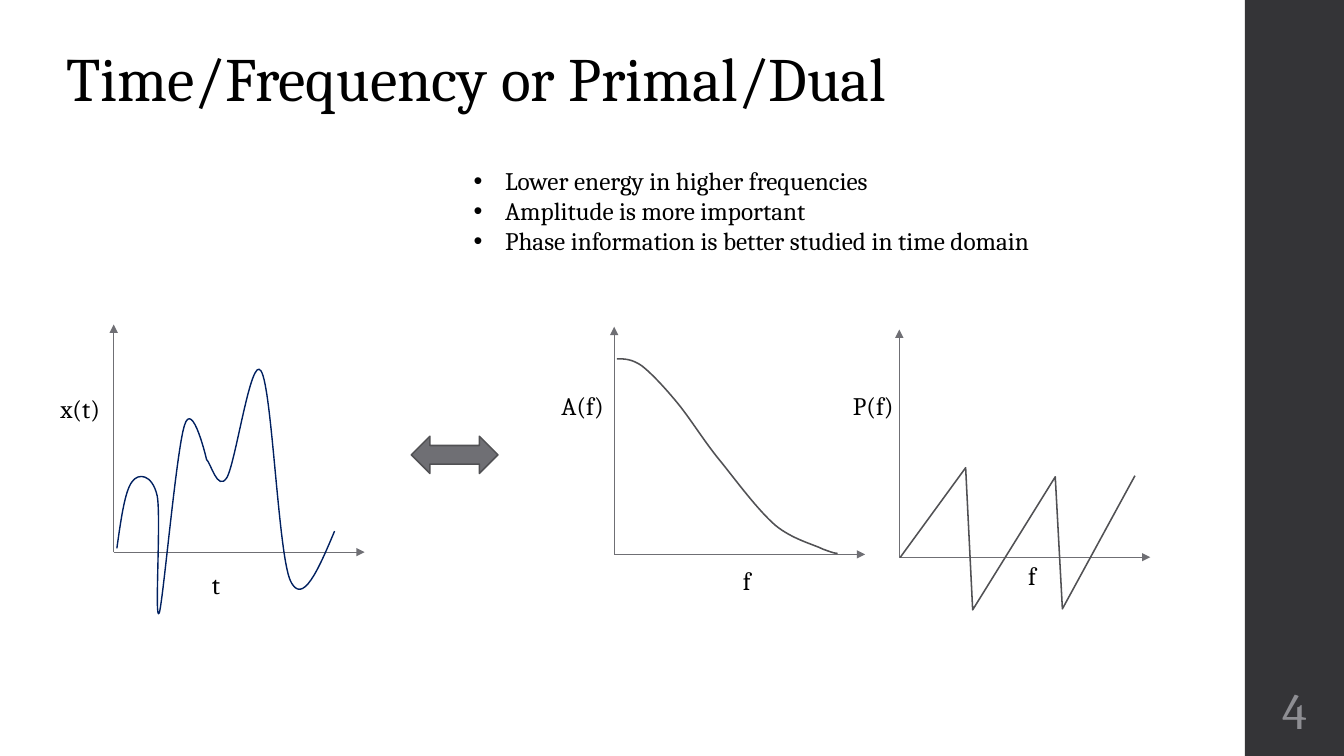
"""Builds a slide comparing a time signal with its amplitude and phase spectra."""
import pptx
import pptx.dml.color
import pptx.enum.shapes
import pptx.enum.text
import pptx.util
from lxml import etree
from pptx.oxml.ns import qn

Pt = pptx.util.Pt
SHAPE = pptx.enum.shapes.MSO_SHAPE
ANCHOR = pptx.enum.text.MSO_ANCHOR
ALIGN = pptx.enum.text.PP_ALIGN

FONT = "Cambria"
COLORS = {
    "text": "000000",
    "sidebar": "343437",
    "number": "8E8E93",
    "axis": "6F6F74",
    "spectrum": "515154",
    "signal": "002060",
}
AXIS_WIDTH, AXIS_HEIGHT = 179.3, 162.6

PLOTS = [
    ((81.2, 394.4), ("x(t)", 36, 277.6), ("t", 144.2, 402.8)),
    ((438.7, 396), ("A(f)", 394, 275), ("f", 523.6, 400.3)),
    ((642.4, 398), ("P(f)", 602.2, 275), ("f", 727.4, 396.7)),
]
SIGNAL = [
    (83.5, 391.7),
    (86.4, 370.8), (89.3, 350.6), (94.3, 344.2),
    (98.6, 337.7), (108.7, 338.4), (112.3, 354.2),
    (115.2, 369.4), (110.2, 446.4), (113.8, 437.8),
    (116.6, 429.1), (126, 321.8), (131.8, 303.8),
    (137.5, 285.1), (147.6, 328.3), (147.6, 328.3),
    (150.5, 330.5), (155.5, 351.4), (162, 341.3),
    (168.5, 330.5), (179.3, 252.7), (186.5, 265),
    (194.4, 277.2), (198.7, 395.3), (207.4, 414.7),
    (216, 433.4), (227.5, 406.8), (239, 379.4),
]
AMPLITUDE = [
    (440.6, 256.3),
    (445.7, 256.3), (451.4, 256.3), (458.6, 261.4),
    (465.8, 267.1), (475.2, 277.2), (484.6, 288.7),
    (493.9, 300.2), (504, 316.8), (515.5, 330.5),
    (527, 344.9), (541.4, 364.3), (553.7, 375.1),
    (565.9, 385.2), (581, 388.8), (588.2, 392.4),
    (596.2, 395.3), (596.9, 395.3), (598.3, 395.3),
]
PHASE = [(643, 398.2), (689.8, 334.1), (694.8, 435.6),
         (753.8, 340.6), (758.9, 434.9), (810.7, 339.8)]
FINDINGS = [
    "Lower energy in higher frequencies",
    "Amplitude is more important",
    "Phase information is better studied in time domain",
]


def rgb(name):
    """Return the named colour."""
    return pptx.dml.color.RGBColor.from_string(COLORS[name])


def add_block(slide, kind, left, top, width, height, fill, outline=None):
    """Add a filled preset shape, outlined if a colour is given."""
    block = slide.shapes.add_shape(kind, Pt(left), Pt(top), Pt(width), Pt(height))
    block.shadow.inherit = False
    block.fill.solid()
    block.fill.fore_color.rgb = rgb(fill)
    if outline:
        block.line.color.rgb = rgb(outline)
        block.line.width = Pt(1.1)
    else:
        block.line.fill.background()


def add_text(slide, lines, left, top, width, height, size=18, color="text",
             anchor=ANCHOR.TOP, align=ALIGN.LEFT, spacing=1.0, bullet=None):
    """Add a text box with one paragraph per line."""
    box = slide.shapes.add_textbox(Pt(left), Pt(top), Pt(width), Pt(height))
    frame = box.text_frame
    frame.word_wrap = True
    frame.vertical_anchor = anchor
    frame.text = "\n".join(lines)
    for paragraph in frame.paragraphs:
        paragraph.alignment = align
        paragraph.line_spacing = spacing
        if bullet:
            properties = paragraph._p.get_or_add_pPr()
            properties.set("marL", str(Pt(22.5)))
            properties.set("indent", str(-Pt(22.5)))
            etree.SubElement(properties, qn("a:buFont"), typeface="Arial")
            etree.SubElement(properties, qn("a:buChar"), char=bullet)
        for run in paragraph.runs:
            run.font.name = FONT
            run.font.size = Pt(size)
            run.font.color.rgb = rgb(color)
    return frame


def add_axis(slide, start, end):
    """Add a thin axis with an arrowhead at its end."""
    axis = slide.shapes.add_connector(
        pptx.enum.shapes.MSO_CONNECTOR.STRAIGHT, *map(Pt, start + end))
    axis.line.color.rgb = rgb("axis")
    axis.line.width = Pt(0.75)
    etree.SubElement(axis.line._get_or_add_ln(), qn("a:tailEnd"), type="triangle")
    etree.SubElement(axis._element.spPr, qn("a:effectLst"))


def add_plot_frame(slide, origin, vertical_label, horizontal_label):
    """Add a pair of axes and their labels."""
    x, y = origin
    add_axis(slide, origin, (x + AXIS_WIDTH, y))
    add_axis(slide, origin, (x, y - AXIS_HEIGHT))
    for (label, left, top), width in ((vertical_label, 49), (horizontal_label, 39)):
        add_text(slide, [label], left, top, width, 29)


def add_outline(slide, points, color, width):
    """Add an open outline through the points."""
    vertices = [(Pt(x), Pt(y)) for x, y in points]
    builder = slide.shapes.build_freeform(*vertices[0])
    builder.add_line_segments(vertices[1:], close=False)
    outline = builder.convert_to_shape()
    outline.shadow.inherit = False
    outline.fill.background()
    outline.line.color.rgb = rgb(color)
    outline.line.width = Pt(width)
    return outline


def add_curve(slide, controls, color, width):
    """Add a chain of cubic Bezier segments, three controls for each."""
    curve = add_outline(slide, controls[::3], color, width)
    segments = list(curve._element.iter(qn("a:lnTo")))
    for index, segment in enumerate(segments):
        segment.tag = qn("a:cubicBezTo")
        handles = controls[3 * index + 1:3 * index + 3]
        for position, (x, y) in enumerate(handles):
            handle = etree.Element(qn("a:pt"), x=str(Pt(x) - curve.left),
                                   y=str(Pt(y) - curve.top))
            segment.insert(position, handle)


def main():
    """Build and save the slide."""
    deck = pptx.Presentation()
    deck.slide_width, deck.slide_height = Pt(960), Pt(540)
    slide = deck.slides.add_slide(deck.slide_layouts[6])

    add_block(slide, SHAPE.RECTANGLE, 889.2, 0, 70.8, 540, "sidebar")
    add_text(slide, ["Time/Frequency or Primal/Dual"], 40.3, 28.8, 822.2, 56.9,
             size=44, anchor=ANCHOR.BOTTOM, spacing=0.9)
    number = add_text(slide, ["4"], 889.2, 486, 70.8, 46.8, size=36, color="number",
                      anchor=ANCHOR.MIDDLE, align=ALIGN.CENTER, spacing=0.9)
    number.margin_left = number.margin_right = Pt(3.6)

    for plot in PLOTS:
        add_plot_frame(slide, *plot)
    add_curve(slide, SIGNAL, "signal", 1)
    add_curve(slide, AMPLITUDE, "spectrum", 1.1)
    add_outline(slide, PHASE, "spectrum", 1.1)

    add_text(slide, FINDINGS, 331.2, 114.5, 495.4, 72.7, bullet="•")
    add_block(slide, SHAPE.LEFT_RIGHT_ARROW, 293.8, 311.6, 61.9, 26.6, "axis", "spectrum")
    deck.save("out.pptx")


if __name__ == "__main__":
    main()
